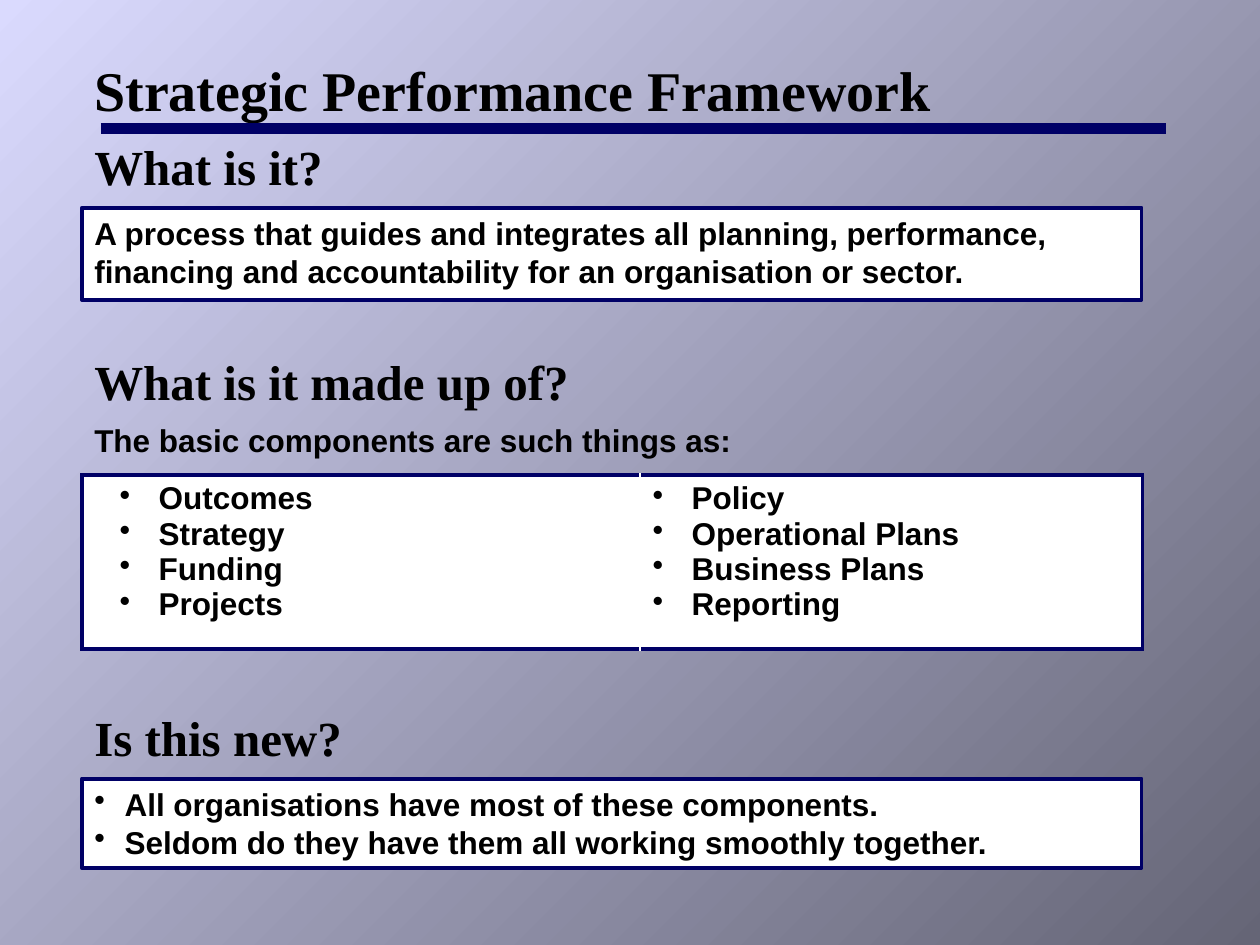
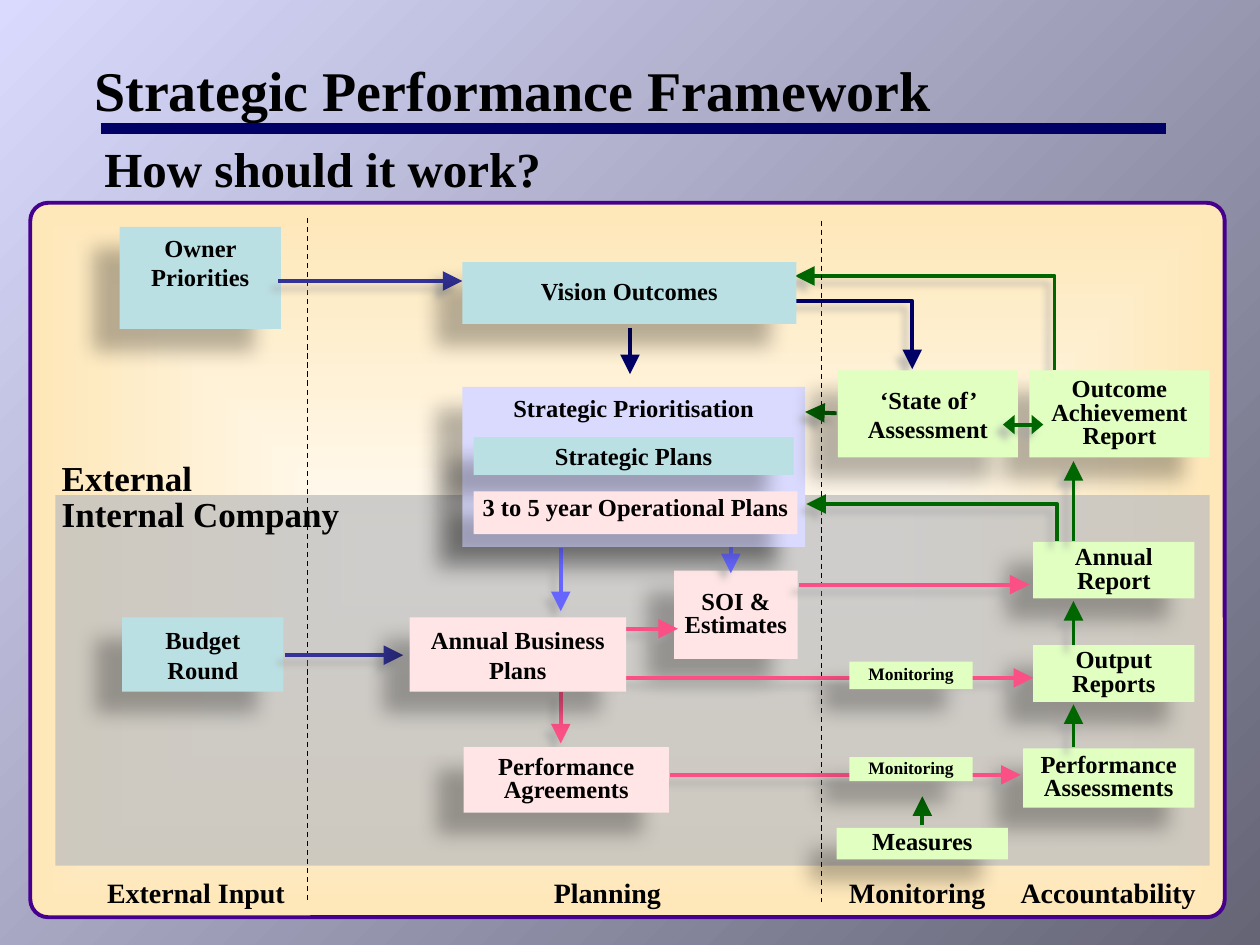
import pptx
import pptx.dml.color
import pptx.enum.dml
import pptx.enum.shapes
import pptx.enum.text
import pptx.oxml
import pptx.oxml.ns
import pptx.util
from lxml import etree

PX = 9144  # EMU per px, 100 px to the inch
SERIF, SANS = "Times New Roman", "Arial"
COLOURS = {
    "ink": "000000", "paper": "FFFFFF", "navy": "000066", "indigo": "333399",
    "violet": "6666FF", "purple": "47008E", "green": "006600", "pink": "FA5085",
    "teal box": "BBE0E3", "green box": "E0FFC1", "pink box": "FFE5E5",
    "lilac": "DADAFE", "slate": "656576", "cream": "FFFCF6", "sand": "FEE7B8",
    "internal": "BFBFBF", "line shadow": "A6A6A6",
}
# colour, opacity %, blur pt, distance pt, direction in degrees
BOX_SHADOW = ("ink", 28, 11.8, 19.7, 141)
LINE_SHADOW = ("line shadow", 64, 4, 6, 135)

qn = pptx.oxml.ns.qn
ALIGN = pptx.enum.text.PP_ALIGN
ANCHOR = pptx.enum.text.MSO_ANCHOR
SHAPE = pptx.enum.shapes.MSO_SHAPE


def rgb(name):
    return pptx.dml.color.RGBColor.from_string(COLOURS[name])


def px(*lengths):
    return [length * PX for length in lengths]


class Deck:
    """House style plus the slide being drawn."""

    def __init__(self):
        self.file = pptx.Presentation()
        self.file.slide_width, self.file.slide_height = px(1000, 750)
        self.slide = None

    def new_slide(self, title):
        self.slide = self.file.slides.add_slide(self.file.slide_layouts[6])
        backdrop = self.slide.background.fill
        self.gradient(backdrop, "lilac", "slate")
        backdrop.gradient_angle = 315
        self.text(title, 65, 31, 819, 80, size=32, anchor=ANCHOR.MIDDLE)
        self.line([(80, 102), (925, 102)], "navy", weight=6)

    def gradient(self, fill, start, end):
        fill.gradient()
        for stop, name, position in zip(fill.gradient_stops, (start, end), (0, 1)):
            stop.color.rgb = rgb(name)
            stop.position = position

    def shadow(self, shape, colour, opacity, blur, distance, direction):
        effects = shape.element.spPr.find(qn("a:effectLst"))
        cast = etree.SubElement(
            effects, qn("a:outerShdw"), blurRad=str(int(blur * 12700)),
            dist=str(int(distance * 12700)), dir=str(direction * 60000),
            algn="ctr", rotWithShape="0")
        tint = etree.SubElement(cast, qn("a:srgbClr"), val=COLOURS[colour])
        etree.SubElement(tint, qn("a:alpha"), val=str(opacity * 1000))

    def fill_text(self, frame, lines, size=14, font=SERIF, align=ALIGN.LEFT,
                  anchor=ANCHOR.TOP, inset=(10, 5), spacing=None, before=0, bullet=None):
        """Fill a text frame; bullet is (left margin, hanging indent) in px."""
        frame.word_wrap = True
        frame.vertical_anchor = anchor
        frame.margin_left = frame.margin_right = inset[0] * PX
        frame.margin_top = frame.margin_bottom = inset[1] * PX
        for number, words in enumerate([lines] if isinstance(lines, str) else lines):
            paragraph = frame.add_paragraph() if number else frame.paragraphs[0]
            paragraph.text = words
            paragraph.alignment = align
            paragraph.line_spacing = spacing
            paragraph.space_before = pptx.util.Pt(before)
            paragraph.font.name = font
            paragraph.font.size = pptx.util.Pt(size)
            paragraph.font.bold = True
            paragraph.font.color.rgb = rgb("ink")
            if bullet:
                props = paragraph._p.get_or_add_pPr()
                props.set("marL", str(bullet[0] * PX))
                props.set("indent", str(-bullet[1] * PX))
                mark = pptx.oxml.parse_xml(
                    f'<a:buChar {pptx.oxml.ns.nsdecls("a")} char="•"/>')
                props.insert_element_before(mark, "a:tabLst", "a:defRPr", "a:extLst")

    def text(self, lines, x, y, w, h, **style):
        self.fill_text(self.slide.shapes.add_textbox(*px(x, y, w, h)).text_frame,
                       lines, **style)

    def heading(self, words, x, y):
        self.text(words, x, y, 819, 53, size=28, spacing=0.9, before=5.6)

    def box(self, x, y, w, h, fill, border=None, kind=SHAPE.RECTANGLE):
        shape = self.slide.shapes.add_shape(kind, *px(x, y, w, h))
        shape.shadow.inherit = False
        shape.fill.solid()
        shape.fill.fore_color.rgb = rgb(fill)
        if border:
            shape.line.color.rgb = rgb(border)
            shape.line.width = pptx.util.Pt(2.25)
        else:
            shape.line.fill.background()
        return shape

    def panel(self, lines, x, y, w, h, **style):
        self.fill_text(self.box(x, y, w, h, "paper", "navy").text_frame, lines,
                       size=18, font=SANS, **style)

    def step(self, words, x, y, w, h, fill, anchor=ANCHOR.MIDDLE, **style):
        shape = self.box(x, y, w, h, fill)
        self.shadow(shape, *BOX_SHADOW)
        self.fill_text(shape.text_frame, words, align=ALIGN.CENTER, anchor=anchor, **style)

    def line(self, points, colour, weight=2.25, ends=(), length="lg",
             dashed=False, shadow=None):
        """Straight connector for two points, open outline for more."""
        shapes = self.slide.shapes
        if len(points) == 2:
            stroke = shapes.add_connector(
                pptx.enum.shapes.MSO_CONNECTOR.STRAIGHT, *px(*points[0], *points[1]))
        else:
            route = shapes.build_freeform(*points[0], scale=PX)
            route.add_line_segments(points[1:], close=False)
            stroke = route.convert_to_shape()
            stroke.fill.background()
        stroke.line.color.rgb = rgb(colour)
        stroke.line.width = pptx.util.Pt(weight)
        if dashed:
            stroke.line.dash_style = pptx.enum.dml.MSO_LINE.DASH
        outline = stroke.element.spPr.find(qn("a:ln"))
        for end in ends:
            etree.SubElement(outline, qn(f"a:{end}"), type="triangle", w="lg", len=length)
        etree.SubElement(stroke.element.spPr, qn("a:effectLst"))
        if shadow:
            self.shadow(stroke, *shadow)

    def arrow(self, colour, *points, shadow=LINE_SHADOW):
        self.line(points, colour, ends=["tailEnd"], shadow=shadow)

    def table(self, columns, x, y, widths, height, bullets):
        """One row of bulleted lists with a border around the whole."""
        table = self.slide.shapes.add_table(
            1, len(columns), *px(x, y, sum(widths), height)).table
        table.first_row = table.horz_banding = False
        table.rows[0].height = height * PX
        sides = (["lnL", "lnT", "lnB"], ["lnR", "lnT", "lnB"])
        for number, lines in enumerate(columns):
            table.columns[number].width = widths[number] * PX
            cell = table.cell(0, number)
            self.fill_text(cell.text_frame, lines, size=18, font=SANS,
                           bullet=bullets[number])
            props = cell._tc.get_or_add_tcPr()
            for side in sides[number]:
                edge = etree.SubElement(props, qn(f"a:{side}"), w="28575")
                paint = etree.SubElement(edge, qn("a:solidFill"))
                etree.SubElement(paint, qn("a:srgbClr"), val=COLOURS["navy"])
            cell.fill.solid()
            cell.fill.fore_color.rgb = rgb("paper")


def what_it_is(deck):
    deck.new_slide("Strategic Performance Framework")
    for question, top in (("What is it?", 109), ("What is it made up of?", 279),
                          ("Is this new?", 562)):
        deck.heading(question, 65, top)
    deck.panel("A process that guides and integrates all planning, performance, "
               "financing and accountability for an organisation or sector.",
               65, 165, 841, 73)
    deck.text("The basic components are such things as:", 65, 329, 589, 40,
              size=18, font=SANS)
    deck.table([["Outcomes", "Strategy", "Funding", "Projects"],
                ["Policy", "Operational Plans", "Business Plans", "Reporting"]],
               65, 377, (443, 399), 138, bullets=((51, 31), (31, 31)))
    deck.panel(["All organisations have most of these components.",
                "Seldom do they have them all working smoothly together."],
               65, 618, 841, 71, bullet=(24, 24))


def how_it_works(deck):
    deck.new_slide("Strategic Performance Framework")
    tight = {"inset": (10, 1), "spacing": 0.8}

    # Framework panel
    frame = deck.box(24, 161, 948, 567, "cream", "purple", SHAPE.ROUNDED_RECTANGLE)
    frame.adjustments[0] = 0.025
    deck.gradient(frame.fill, "cream", "sand")
    glow = frame.element.spPr.find(qn("a:gradFill"))
    glow.remove(glow.find(qn("a:lin")))
    spread = etree.SubElement(glow, qn("a:path"), path="shape")
    etree.SubElement(spread, qn("a:fillToRect"), l="50000", t="50000", r="50000", b="50000")

    # Outcome report feeds back across the external zone
    deck.arrow("green", (837, 294), (837, 219), (631, 219))
    deck.step("Outcome Achievement Report", 817, 294, 143, 69, "green box",
              spacing=0.8, before=2.8)

    # Internal zone, column dividers and labels
    internal = deck.box(44, 393, 916, 294, "internal")
    tint = internal.element.spPr.find(qn("a:solidFill"))[0]
    etree.SubElement(tint, qn("a:alpha"), val="76000")
    for x, top in ((244, 173), (652, 175)):
        deck.line([(x, top), (x, 716)], "ink", weight=0.75, dashed=True)
    for zone, top in (("External", 357), ("Internal Company", 386)):
        deck.text(zone, 43, top, 235, 40, size=20, inset=(6, 5))
    for stage, x, w in (("External Input", 65, 181), ("Planning", 417, 130),
                        ("Monitoring", 656, 144), ("Accountability", 795, 169)):
        deck.text(stage, x, 693, w, 30, size=16, align=ALIGN.CENTER, anchor=ANCHOR.MIDDLE)

    # Steps under the arrows
    deck.step("Strategic Prioritisation", 367, 307, 272, 127, "lilac",
              anchor=ANCHOR.TOP, inset=(6, 5))
    for report, x, y, w, h in (("Annual Report", 820, 430, 128, 45),
                               ("Output Reports", 820, 512, 128, 45),
                               ("Performance Assessments", 812, 594, 136, 47)):
        deck.step(report, x, y, w, h, "green box", **tight)
    deck.step("SOI & Estimates", 535, 453, 98, 70, "pink box", inset=(6, 1), spacing=0.8)
    deck.step("Owner Priorities", 95, 180, 128, 81, "teal box", anchor=ANCHOR.TOP)
    deck.step("Budget Round", 97, 490, 128, 59, "teal box")

    # External input
    deck.arrow("indigo", (226, 520), (320, 520))
    deck.arrow("indigo", (221, 223), (367, 223))
    # Planning
    deck.arrow("navy", (500, 260), (500, 297), shadow=None)
    deck.arrow("violet", (445, 435), (445, 485))
    deck.arrow("violet", (580, 434), (580, 455))
    deck.arrow("pink", (445, 549), (445, 590))
    deck.arrow("pink", (494, 499), (538, 499))
    # Monitoring
    for start, end, y in ((634, 817, 464), (493, 820, 538), (532, 810, 615)):
        deck.arrow("pink", (start, y), (end, y))
    deck.arrow("navy", (630, 239), (724, 239), (724, 293))
    deck.arrow("green", (664, 328), (639, 327))
    deck.arrow("green", (732, 655), (732, 632), shadow=None)
    # Accountability
    for start, end in ((593, 559), (512, 477), (429, 366)):
        deck.arrow("green", (852, start), (852, end))
    deck.arrow("green", (839, 429), (839, 400), (640, 400))

    # Steps over the arrows
    for y, h in ((601, 19), (525, 22)):
        deck.step("Monitoring", 674, y, 98, h, "green box", size=10, **tight)
    deck.step("Measures", 664, 657, 136, 25, "green box", **tight)
    deck.step("Annual Business Plans", 325, 490, 172, 59, "pink box", before=2.8)
    deck.step("Strategic Plans", 376, 347, 254, 30, "teal box", before=2.8)
    deck.step("3 to 5 year Operational Plans", 376, 390, 257, 34, "pink box",
              anchor=ANCHOR.TOP, inset=(6, 5), spacing=0.8)
    deck.step("‘State of’ Assessment", 665, 294, 143, 69, "green box", before=2.8)
    deck.step("Vision Outcomes", 367, 208, 265, 49, "teal box", spacing=0.9, before=2.8)
    deck.step("Performance Agreements", 368, 593, 163, 52, "pink box", spacing=0.8)
    deck.line([(828, 337), (796, 337)], "green", ends=["headEnd", "tailEnd"],
              length="med", shadow=LINE_SHADOW)
    deck.heading("How should it work?", 73, 110)


def main():
    deck = Deck()
    what_it_is(deck)
    how_it_works(deck)
    deck.file.save("out.pptx")


if __name__ == "__main__":
    main()
